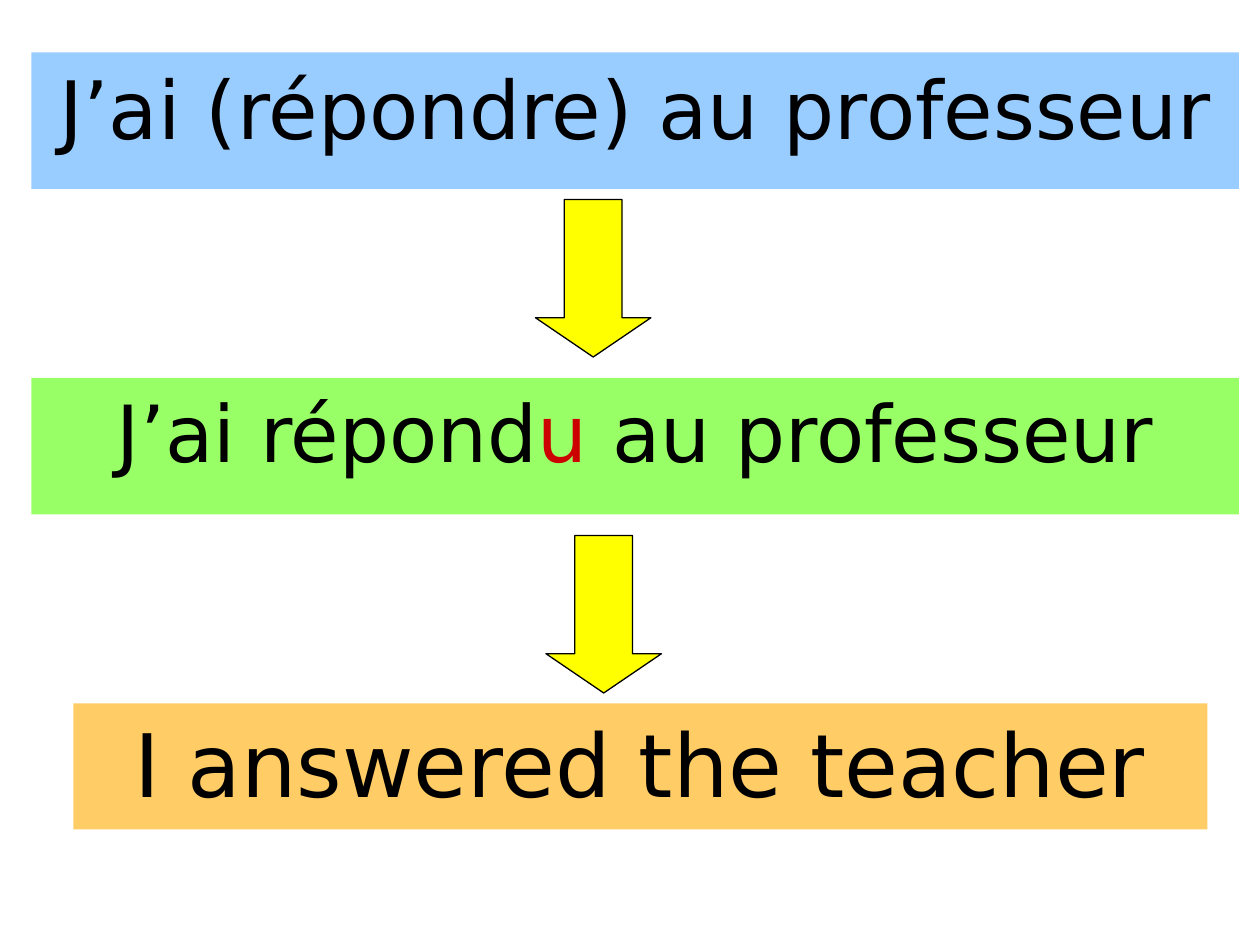
from pptx import Presentation
from pptx.dml.color import RGBColor
from pptx.enum.shapes import MSO_SHAPE
from pptx.enum.text import MSO_ANCHOR, PP_ALIGN
from pptx.util import Emu, Pt

RECTANGLE = MSO_SHAPE.RECTANGLE
DOWN_ARROW = MSO_SHAPE.DOWN_ARROW
TOP = MSO_ANCHOR.TOP
CENTER = PP_ALIGN.CENTER

PX = 7620  # EMU per px, 120 px to the inch
FONT = "DejaVu Sans"
COLORS = {
    "question": "99CCFF",
    "answer": "99FF66",
    "translation": "FFCC66",
    "arrow": "FFFF00",
    "ink": "000000",
    "ending": "CC0000",
}


def color(name):
    return RGBColor.from_string(COLORS[name])


def add_filled(page, kind, box, fill):
    shape = page.shapes.add_shape(kind, *(Emu(n * PX) for n in box))
    shape.shadow.inherit = False
    shape.fill.solid()
    shape.fill.fore_color.rgb = color(fill)
    return shape


def add_banner(page, box, fill, size, spans):
    """Coloured band with one centred sentence, given as (text, colour) spans."""
    banner = add_filled(page, RECTANGLE, box, fill)
    banner.line.fill.background()
    frame = banner.text_frame
    frame.word_wrap = True
    frame.vertical_anchor = TOP
    para = frame.paragraphs[0]
    para.alignment = CENTER
    para.space_before = Pt(3.6)
    for text, ink in spans:
        span = para.add_run()
        span.text = text
        span.font.name = FONT
        span.font.size = Pt(size)
        span.font.color.rgb = color(ink)


def add_arrow(page, box):
    """Yellow arrow leading to the next sentence."""
    arrow = add_filled(page, DOWN_ARROW, box, "arrow")
    arrow.adjustments[0] = 0.5
    arrow.adjustments[1] = 0.34
    arrow.line.color.rgb = color("ink")
    arrow.line.width = Pt(0.75)


def build_page(page):
    # Sentence with the infinitive
    add_banner(page, (30, 50, 1150, 130), "question", 46,
               [("J’ai (répondre) au professeur", "ink")])
    add_arrow(page, (510, 190, 110, 150))

    # Sentence with the past participle, its ending in red
    add_banner(page, (30, 360, 1150, 130), "answer", 45,
               [("J’ai répond", "ink"), ("u", "ending"),
                (" au professeur", "ink")])

    # English translation
    add_banner(page, (70, 670, 1080, 120), "translation", 50,
               [("I answered the teacher", "ink")])
    add_arrow(page, (520, 510, 110, 150))


def main():
    deck = Presentation()
    deck.slide_width = Emu(1200 * PX)
    deck.slide_height = Emu(900 * PX)
    build_page(deck.slides.add_slide(deck.slide_layouts[6]))
    deck.save("out.pptx")


if __name__ == "__main__":
    main()
